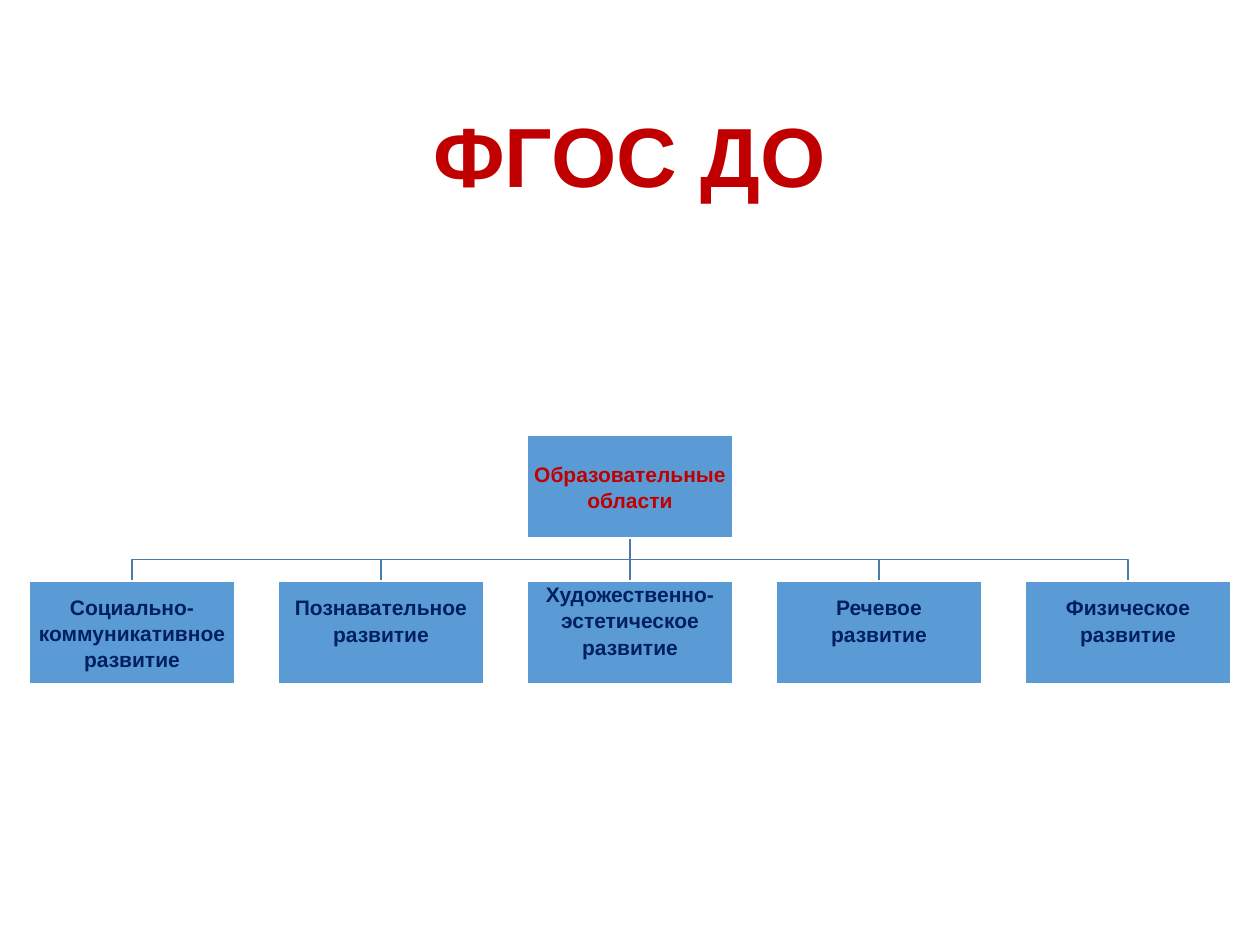
from lxml.etree import SubElement
from pptx import Presentation
from pptx.dml.color import RGBColor
from pptx.enum.shapes import MSO_CONNECTOR, MSO_SHAPE
from pptx.enum.text import MSO_ANCHOR, MSO_AUTO_SIZE, PP_ALIGN
from pptx.oxml.ns import qn
from pptx.util import Pt

EMU_PER_PX = 914400 / 126
COLORS = {
    "box": "5B9BD5",
    "border": "FFFFFF",
    "branch": "497CAB",
    "accent": "C00000",
    "label": "002060",
}
BOX_WIDTH, BOX_HEIGHT = 206, 103
CENTER, PITCH = 630, 249
ROOT_TOP, AREA_TOP = 435, 581
INSET, LINE_HEIGHT = 1, 25
TITLE_BOX = (418, 96, 423, 115)
ROOT = "Образовательные\nобласти"
AREAS = [
    ("Социально-\nкоммуникативное\nразвитие", 0),
    ("Познавательное\nразвитие", LINE_HEIGHT),
    ("Художественно-\nэстетическое\nразвитие", LINE_HEIGHT),
    ("Речевое\nразвитие", LINE_HEIGHT),
    ("Физическое\nразвитие", LINE_HEIGHT),
]


def px(value):
    """Turn pixels into EMU."""
    return round(value * EMU_PER_PX)


def color(name):
    """Return a named color."""
    return RGBColor.from_string(COLORS[name])


def set_values(target, values):
    """Set attributes of an object from a dict."""
    for name, value in values.items():
        setattr(target, name, value)


def write_text(shape, text, size, color_name, frame_values, paragraph_values):
    """Fill a shape with bold centred paragraphs, one for each line."""
    frame = shape.text_frame
    frame.text = text
    set_values(frame, {"auto_size": MSO_AUTO_SIZE.NONE,
                       "vertical_anchor": MSO_ANCHOR.MIDDLE, **frame_values})
    for paragraph in frame.paragraphs:
        set_values(paragraph, {"alignment": PP_ALIGN.CENTER, **paragraph_values})
        set_values(paragraph.font, {"name": "Arial", "size": Pt(size), "bold": True})
        paragraph.font.color.rgb = color(color_name)


def style_line(shape, color_name):
    """Give a shape or connector a one-point line."""
    shape.line.color.rgb = color(color_name)
    shape.line.width = Pt(1)


def add_title(slide, text):
    """Place the heading in the title placeholder."""
    title = slide.shapes.title
    set_values(title, dict(zip(("left", "top", "width", "height"), map(px, TITLE_BOX))))
    write_text(title, text, 48, "accent", {"word_wrap": False}, {})


def add_box(slide, center, top, text, color_name, extra_bottom=0):
    """Add one box of the chart; extra_bottom lifts its text."""
    box = slide.shapes.add_shape(MSO_SHAPE.RECTANGLE, px(center - BOX_WIDTH / 2), px(top),
                                 px(BOX_WIDTH), px(BOX_HEIGHT))
    box.shadow.inherit = False
    box.fill.solid()
    box.fill.fore_color.rgb = color("box")
    style_line(box, "border")
    margins = {f"margin_{side}": px(INSET) for side in ("left", "top", "right")}
    margins["margin_bottom"] = px(INSET + extra_bottom)
    write_text(box, text, 12, color_name, {"word_wrap": True, **margins},
               {"line_spacing": 1.05})


def add_branch(slide, center):
    """Join the root box to the area box at the given centre."""
    start, end = ROOT_TOP + BOX_HEIGHT, AREA_TOP
    if center == CENTER:
        branch = slide.shapes.add_connector(MSO_CONNECTOR.STRAIGHT, px(CENTER), px(start),
                                            px(CENTER), px(end))
        SubElement(branch._element.spPr, qn("a:effectLst"))
    else:
        middle = (start + end) / 2
        builder = slide.shapes.build_freeform(px(CENTER), px(start))
        corners = [(CENTER, middle), (center, middle), (center, end)]
        builder.add_line_segments([(px(x), px(y)) for x, y in corners], close=False)
        branch = builder.convert_to_shape()
        branch.shadow.inherit = False
        branch.fill.background()
    style_line(branch, "branch")


def main():
    """Build the slide and save it."""
    presentation = Presentation()
    set_values(presentation, {"slide_width": px(1260), "slide_height": px(945)})
    slide = presentation.slides.add_slide(presentation.slide_layouts[5])
    centers = [CENTER + PITCH * (index - len(AREAS) // 2) for index in range(len(AREAS))]
    for center in centers:
        add_branch(slide, center)
    add_box(slide, CENTER, ROOT_TOP, ROOT, "accent")
    for center, (text, extra_bottom) in zip(centers, AREAS):
        add_box(slide, center, AREA_TOP, text, "label", extra_bottom)
    add_title(slide, "ФГОС ДО")
    presentation.save("out.pptx")


if __name__ == "__main__":
    main()
